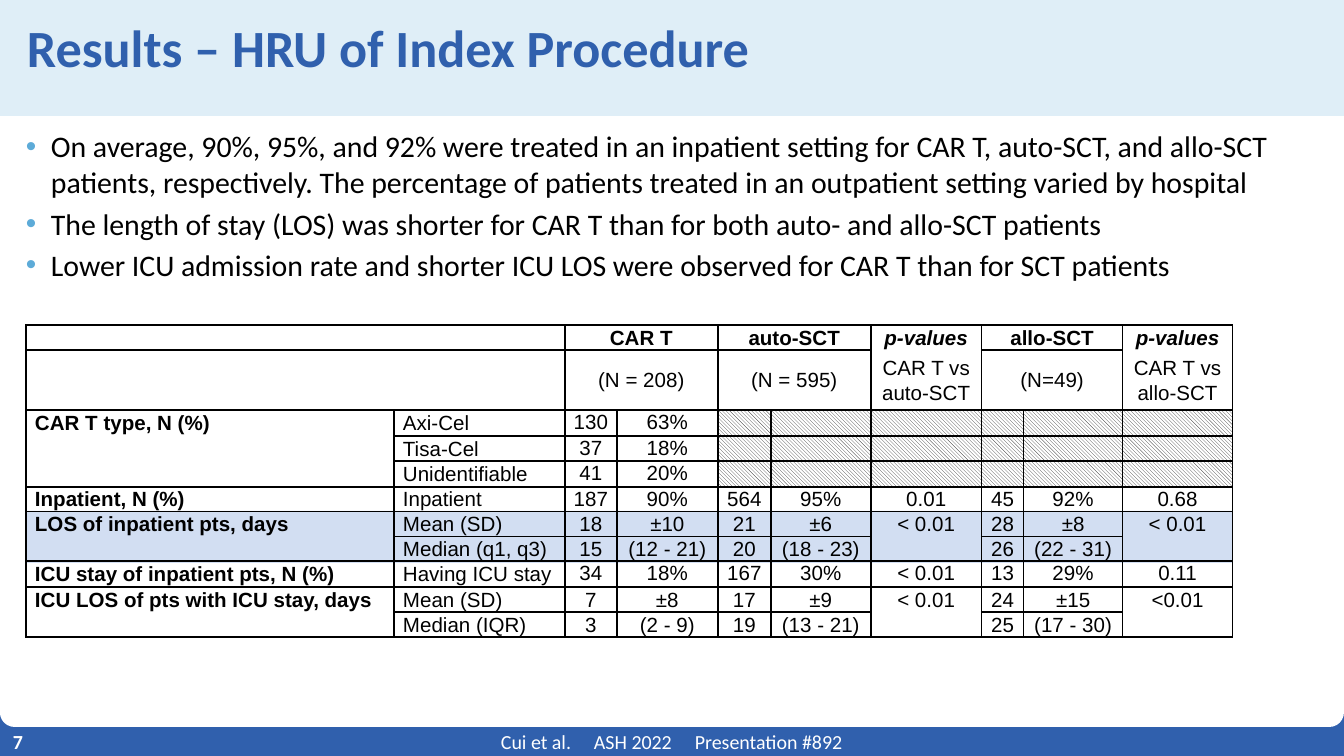
from lxml.etree import SubElement
from pptx import Presentation
from pptx.dml.color import RGBColor
from pptx.enum.dml import MSO_PATTERN
from pptx.enum.shapes import MSO_SHAPE
from pptx.enum.text import MSO_ANCHOR, MSO_AUTO_SIZE, PP_ALIGN
from pptx.oxml.ns import qn
from pptx.util import Pt

EMU_PER_PIXEL = 914400 / 134.4
SLIDE_WIDTH, SLIDE_HEIGHT = 1344, 756
BLUE, WHITE, BLACK = "3060AD", "FFFFFF", "000000"
NO_MARGINS = (0, 0, 0, 0)

BULLETS = [
    "On average, 90%, 95%, and 92% were treated in an inpatient setting for CAR T, auto-SCT, and allo-SCT "
    "patients, respectively. The percentage of patients treated in an outpatient setting varied by hospital",
    "The length of stay (LOS) was shorter for CAR T than for both auto- and allo-SCT patients",
    "Lower ICU admission rate and shorter ICU LOS were observed for CAR T than for SCT patients",
]

COLUMN_WIDTHS = [368, 171, 52, 101, 53, 100, 111, 42, 99, 110]
ROW_HEIGHTS = [25, 60, 26, 25, 26, 24, 25, 25, 26, 25, 25]
ROWS = [
    ["", "", "CAR T", "", "auto-SCT", "", "p-values", "allo-SCT", "", "p-values"],
    ["", "", "(N = 208)", "", "(N = 595)", "", "CAR T vs auto-SCT", "(N=49)", "", "CAR T vs allo-SCT"],
    ["CAR T type, N (%)", "Axi-Cel", "130", "63%"] + [""] * 6,
    ["", "Tisa-Cel", "37", "18%"] + [""] * 6,
    ["", "Unidentifiable", "41", "20%"] + [""] * 6,
    ["Inpatient, N (%)", "Inpatient", "187", "90%", "564", "95%", "0.01", "45", "92%", "0.68"],
    ["LOS of inpatient pts, days", "Mean (SD)", "18", "±10", "21", "±6", "< 0.01", "28", "±8", "< 0.01"],
    ["", "Median (q1, q3)", "15", "(12 - 21)", "20", "(18 - 23)", "", "26", "(22 - 31)", ""],
    ["ICU stay of inpatient pts, N (%)", "Having ICU stay", "34", "18%", "167", "30%", "< 0.01", "13", "29%", "0.11"],
    ["ICU LOS of pts with ICU stay, days", "Mean (SD)", "7", "±8", "17", "±9", "< 0.01", "24", "±15", "<0.01"],
    ["", "Median (IQR)", "3", "(2 - 9)", "19", "(13 - 21)", "", "25", "(17 - 30)", ""],
]
P_VALUE_COLUMNS = (6, 9)
HATCHED_ROWS = (2, 3, 4)
COMPACT_ROWS = (2, 3, 4, 8)
OPEN_BELOW_ROWS = (0, 9)
HIGHLIGHTED_ROWS = (6, 7)
MERGES = [(row, column, row, column + 1) for row in (0, 1) for column in (0, 2, 4, 7)]
MERGES += [(2, 0, 4, 0), (6, 0, 7, 0), (9, 0, 10, 0)]
MERGES += [(6, column, 7, column) for column in P_VALUE_COLUMNS]


def px(length):
    return round(length * EMU_PER_PIXEL)


def color(hex_value):
    return RGBColor.from_string(hex_value)


def set_values(target, values):
    for name, value in values.items():
        setattr(target, name, value)


def set_margins(target, margins):
    sides = ("margin_left", "margin_top", "margin_right", "margin_bottom")
    set_values(target, {side: px(margin) for side, margin in zip(sides, margins)})


def write(paragraph, text, font, paragraph_format):
    set_values(paragraph, paragraph_format)
    run = paragraph.add_run()
    run.text = text
    hex_value = font["color"]
    set_values(run.font, {name: value for name, value in font.items() if name != "color"})
    run.font.color.rgb = color(hex_value)


def add_block(slide, box, hex_value, preset=MSO_SHAPE.RECTANGLE):
    shape = slide.shapes.add_shape(preset, *map(px, box))
    shape.shadow.inherit = False
    shape.fill.solid()
    shape.fill.fore_color.rgb = color(hex_value)
    shape.line.fill.background()
    return shape


def place_placeholder(slide, index, box, margins):
    placeholder = slide.placeholders[index]
    set_values(placeholder, dict(zip(("left", "top", "width", "height"), map(px, box))))
    slide.shapes._spTree.append(placeholder._element)
    frame = placeholder.text_frame
    set_values(frame, {"word_wrap": True, "auto_size": MSO_AUTO_SIZE.NONE, "vertical_anchor": MSO_ANCHOR.TOP})
    set_margins(frame, margins)
    return placeholder


def add_label(slide, box, text, margins, bold, tab_stops=()):
    frame = slide.shapes.add_textbox(*map(px, box)).text_frame
    set_values(frame, {"word_wrap": True, "vertical_anchor": MSO_ANCHOR.MIDDLE})
    set_margins(frame, margins)
    font = {"name": "Calibri", "size": Pt(10.7), "bold": bold, "color": WHITE}
    paragraph = frame.paragraphs[0]
    write(paragraph, text, font, {"alignment": PP_ALIGN.LEFT})
    if tab_stops:
        tab_list = SubElement(paragraph._p.get_or_add_pPr(), qn("a:tabLst"))
        for position in tab_stops:
            SubElement(tab_list, qn("a:tab"), pos=str(px(position)), algn="l")


def add_page_frame(slide, box):
    left, top, width, height = box
    add_block(slide, (left, top + height - 76, width, 76), BLUE)
    page = add_block(slide, (left, top, width, height - 29), WHITE, MSO_SHAPE.ROUND_2_SAME_RECTANGLE)
    page.adjustments[0] = 0
    page.adjustments[1] = 0.02


def add_footer(slide, box):
    left, top, width, height = box
    text = "Cui et al.\tASH 2022\tPresentation #892"
    add_label(slide, box, text, (501, 0, 0, 0), False, (93, 194))
    add_label(slide, (left, top - 6, 85, height + 12), "7", (13, 0, 13, 0), True)


def add_title(slide, box):
    title = place_placeholder(slide, 0, box, (27, 27, 27, 0))
    title.fill.solid()
    title.fill.fore_color.rgb = color("DFEEF7")
    font = {"name": "Calibri", "size": Pt(28), "bold": True, "color": BLUE}
    paragraph_format = {"alignment": PP_ALIGN.LEFT, "line_spacing": 0.8}
    write(title.text_frame.paragraphs[0], "Results – HRU of Index Procedure", font, paragraph_format)


def add_bullets(slide, box):
    frame = place_placeholder(slide, 1, box, NO_MARGINS).text_frame
    font = {"name": "Calibri", "size": Pt(16), "color": BLACK}
    for index, text in enumerate(BULLETS):
        paragraph = frame.add_paragraph() if index else frame.paragraphs[0]
        write(paragraph, text, font, {"space_before": Pt(0), "space_after": Pt(3), "line_spacing": 1.0})
        properties = paragraph._p.get_or_add_pPr()
        properties.set("marL", str(px(25)))
        properties.set("indent", str(px(-25)))
        SubElement(SubElement(properties, qn("a:buClr")), qn("a:srgbClr"), val="5DABD8")
        SubElement(properties, qn("a:buFont"), typeface="Arial")
        SubElement(properties, qn("a:buChar"), char="•")


def draw_borders(cell, open_sides):
    properties = cell._tc.get_or_add_tcPr()
    for side in "LRTB":
        line = SubElement(properties, qn(f"a:ln{side}"), w=str(Pt(1)))
        if side in open_sides:
            SubElement(line, qn("a:noFill"))
        else:
            SubElement(SubElement(line, qn("a:solidFill")), qn("a:srgbClr"), val=BLACK)


def fill_cell(cell, hatched):
    if hatched:
        cell.fill.patterned()
        cell.fill.pattern = MSO_PATTERN.LIGHT_DOWNWARD_DIAGONAL
        cell.fill.fore_color.rgb = color("404040")
        cell.fill.back_color.rgb = color(WHITE)
    else:
        cell.fill.background()


def format_cell(cell, row, column, text):
    open_sides = ""
    if column in P_VALUE_COLUMNS:
        open_sides = "B" if row in OPEN_BELOW_ROWS else "T" if row - 1 in OPEN_BELOW_ROWS else ""
    draw_borders(cell, open_sides)
    fill_cell(cell, row in HATCHED_ROWS and column > 3)
    compact = row in COMPACT_ROWS and column > 1
    side_margin = 9 if column < 2 else 5
    set_margins(cell, (1, 1, 1, 0) if compact else (side_margin, 0, side_margin, 0))
    cell.vertical_anchor = {0: MSO_ANCHOR.BOTTOM, 1: MSO_ANCHOR.MIDDLE}.get(row, MSO_ANCHOR.TOP)
    paragraph = cell.text_frame.paragraphs[0]
    if not text:
        paragraph._p.get_or_add_endParaRPr().set("sz", "800")
        return
    font = {"name": "Arial", "size": Pt(11), "bold": row == 0 or column == 0,
            "italic": text == "p-values", "color": BLACK}
    alignment = PP_ALIGN.LEFT if column < 2 else PP_ALIGN.CENTER
    write(paragraph, text, font, {"alignment": alignment, "line_spacing": 1.0 if compact else 1.07})


def add_results_table(slide, box):
    left, top, width, height = box
    first = HIGHLIGHTED_ROWS[0]
    highlight_height = sum(ROW_HEIGHTS[row] for row in HIGHLIGHTED_ROWS) + 2
    add_block(slide, (left, top + sum(ROW_HEIGHTS[:first]), width, highlight_height), "D2DEF2")
    table = slide.shapes.add_table(len(ROWS), len(COLUMN_WIDTHS), *map(px, box)).table
    set_values(table, {"first_row": False, "horz_banding": False})
    for column, column_width in zip(table.columns, COLUMN_WIDTHS):
        column.width = px(column_width)
    for row, row_height in zip(table.rows, ROW_HEIGHTS):
        row.height = px(row_height)
    for row, texts in enumerate(ROWS):
        for column, text in enumerate(texts):
            format_cell(table.cell(row, column), row, column, text)
    for first_row, first_column, last_row, last_column in MERGES:
        table.cell(first_row, first_column).merge(table.cell(last_row, last_column))


def main():
    presentation = Presentation()
    set_values(presentation, {"slide_width": px(SLIDE_WIDTH), "slide_height": px(SLIDE_HEIGHT)})
    slide = presentation.slides.add_slide(presentation.slide_layouts[1])
    add_page_frame(slide, (0, 0, SLIDE_WIDTH, SLIDE_HEIGHT))
    add_bullets(slide, (26, 128, 1253, 551))
    add_results_table(slide, (26, 325, sum(COLUMN_WIDTHS), sum(ROW_HEIGHTS)))
    add_title(slide, (0, 0, SLIDE_WIDTH, 116))
    add_footer(slide, (0, 728, SLIDE_WIDTH, 28))
    presentation.save("out.pptx")


if __name__ == "__main__":
    main()
